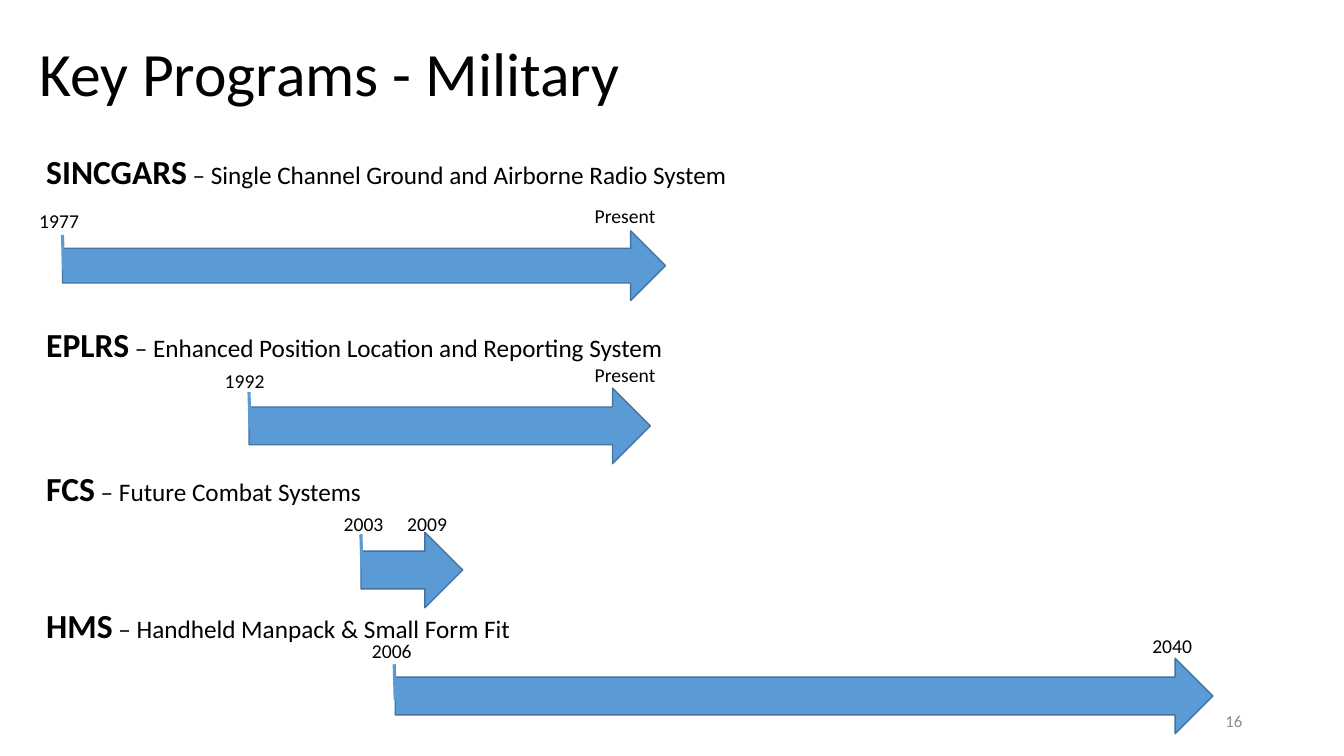
"""Build a slide with four military radio programs as timeline arrows."""
from lxml import etree
from pptx import Presentation
from pptx.dml.color import RGBColor
from pptx.enum import shapes, text
from pptx.oxml.ns import qn
from pptx.util import Inches, Pt

COLORS = {"ink": "000000", "muted": "8C8C8C", "arrow": "5B9BD5", "edge": "43739E"}
FONT = "Calibri"
TITLE = "Key Programs - Military"
PAGE = "16"
HEADING_LEFT = 0.36
DATE_HEIGHT = 0.34
TICK_LENGTH, TICK_SLANT = 0.35, 0.01

PROGRAMS = [
    {"name": "SINCGARS", "meaning": "Single Channel Ground and Airborne Radio System",
     "heading": (1.45, 7.09), "arrow": (0.62, 2.29, 5.98, 0.69), "tick": (0.62, 2.33),
     "start": ("1977", 0.29, 2.02), "end": ("Present", 5.8, 1.97)},
    {"name": "EPLRS", "meaning": "Enhanced Position Location and Reporting System",
     "heading": (3.16, 6.45), "arrow": (2.47, 3.85, 3.98, 0.75), "tick": (2.47, 3.89),
     "start": ("1992", 2.13, 3.61), "end": ("Present", 5.8, 3.55)},
    {"name": "FCS", "meaning": "Future Combat Systems",
     "heading": (4.59, 3.49), "arrow": (3.58, 5.28, 1.01, 0.75), "tick": (3.58, 5.3),
     "start": ("2003", 3.31, 5.03), "end": ("2009", 3.94, 5.03)},
    {"name": "HMS", "meaning": "Handheld Manpack & Small Form Fit",
     "heading": (5.95, 4.99), "arrow": (3.92, 6.53, 8.11, 0.75), "tick": (3.91, 6.59),
     "start": ("2006", 3.59, 6.29), "end": ("2040", 11.33, 6.24)},
]


def rgb(name):
    return RGBColor.from_string(COLORS[name])


def add_text(slide, box, runs, color="ink", middle=False, wrap=True):
    label = slide.shapes.add_textbox(*map(Inches, box))
    frame = label.text_frame
    frame.word_wrap = wrap
    frame.vertical_anchor = text.MSO_ANCHOR.MIDDLE if middle else text.MSO_ANCHOR.TOP
    paragraph = frame.paragraphs[0]
    for words, size, bold in runs:
        run = paragraph.add_run()
        run.text = words
        run.font.name, run.font.size, run.font.bold = FONT, Pt(size), bold
        run.font.color.rgb = rgb(color)
    return paragraph


def add_arrow(slide, box):
    arrow = slide.shapes.add_shape(shapes.MSO_SHAPE.RIGHT_ARROW, *map(Inches, box))
    arrow.shadow.inherit = False
    arrow.fill.solid()
    arrow.fill.fore_color.rgb = rgb("arrow")
    arrow.line.color.rgb = rgb("edge")
    arrow.line.width = Pt(1)


def add_tick(slide, left, top):
    ends = (left, top, left + TICK_SLANT, top + TICK_LENGTH)
    tick = slide.shapes.add_connector(shapes.MSO_CONNECTOR.STRAIGHT, *map(Inches, ends))
    tick.line.color.rgb = rgb("arrow")
    tick.line.width = Pt(2.25)
    etree.SubElement(tick._element.spPr, qn("a:effectLst"))


def add_program(slide, program):
    top, width = program["heading"]
    add_arrow(slide, program["arrow"])
    add_text(slide, (HEADING_LEFT, top, width, 0.5),
             [(program["name"], 24, True), (f" – {program['meaning']}", 18, False)], wrap=False)
    add_tick(slide, *program["tick"])
    for moment, date_width in (("start", 0.69), ("end", 0.92)):
        date, left, date_top = program[moment]
        add_text(slide, (left, date_top, date_width, DATE_HEIGHT), [(date, 14, False)])


def main():
    deck = Presentation()
    deck.slide_width, deck.slide_height = Inches(13.33), Inches(7.5)
    slide = deck.slides.add_slide(deck.slide_layouts[6])
    title = add_text(slide, (0.29, 0.03, 11.5, 1.45), [(TITLE, 44, False)], middle=True)
    title.line_spacing = 0.9
    page = add_text(slide, (9.42, 6.95, 3, 0.4), [(PAGE, 12, False)], "muted", middle=True)
    page.alignment = text.PP_ALIGN.RIGHT
    for program in PROGRAMS:
        add_program(slide, program)
    deck.save("out.pptx")


if __name__ == "__main__":
    main()
